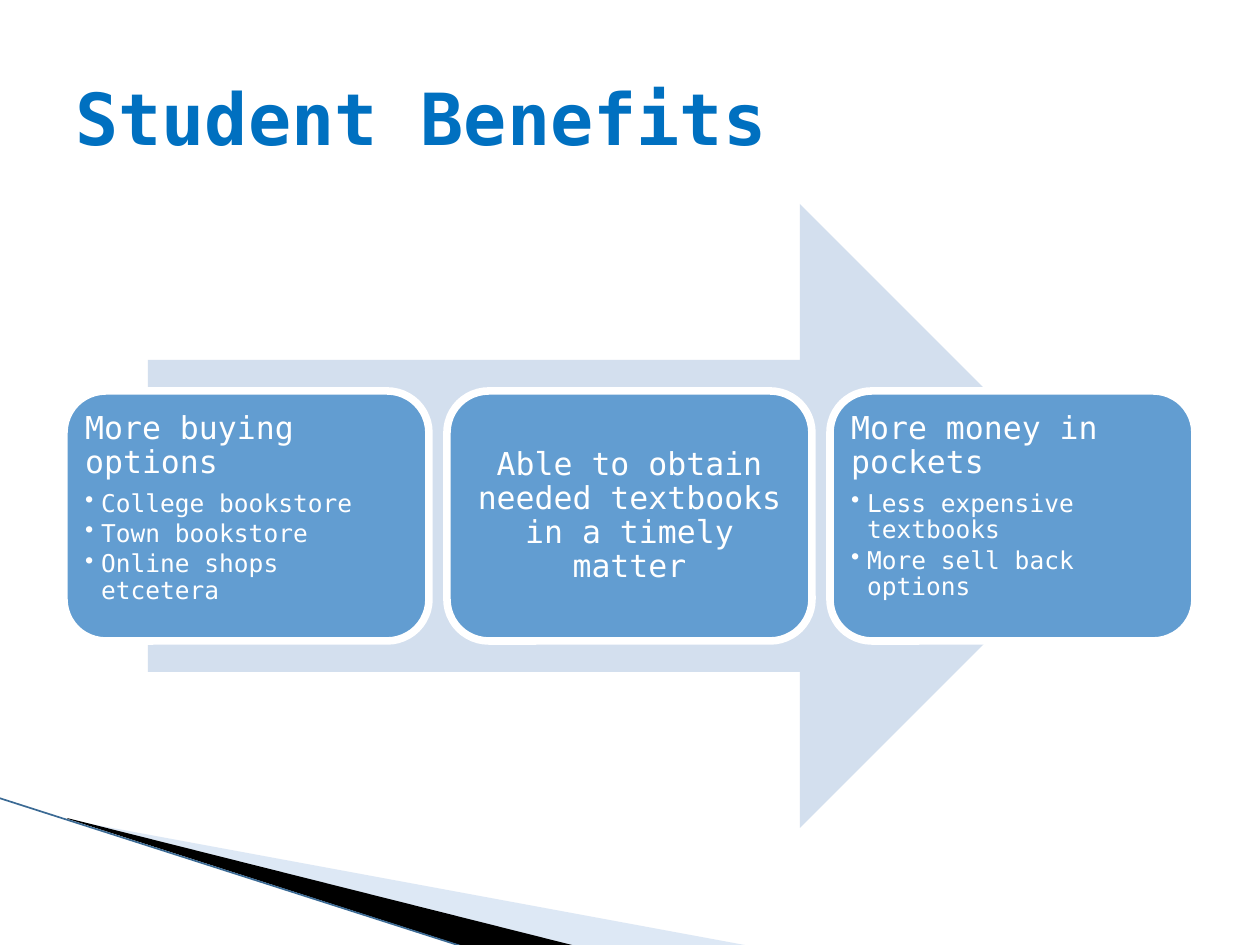
"""Build the Student Benefits slide: three benefit cards on a broad arrow."""
from lxml import etree
from pptx import Presentation
from pptx.dml.color import RGBColor
from pptx.enum.shapes import MSO_CONNECTOR, MSO_SHAPE
from pptx.enum.text import MSO_ANCHOR, PP_ALIGN
from pptx.oxml.ns import qn
from pptx.util import Pt

PX = 914400 / 126
ARROW, CARD = MSO_SHAPE.RIGHT_ARROW, MSO_SHAPE.ROUNDED_RECTANGLE
STRAIGHT = MSO_CONNECTOR.STRAIGHT
TOP, MIDDLE = MSO_ANCHOR.TOP, MSO_ANCHOR.MIDDLE
LEFT, CENTER = PP_ALIGN.LEFT, PP_ALIGN.CENTER


def rgb(value):
    return RGBColor.from_string(value)


def write(frame, text, size=18, color="FFFFFF", bold=False, align=LEFT,
          after=0, spacing=1.0, bullet=False):
    paragraph = frame.paragraphs[0]
    if paragraph.runs:
        paragraph = frame.add_paragraph()
    paragraph.alignment = align
    paragraph.line_spacing = spacing
    paragraph.space_after = Pt(after)
    if bullet:
        properties = paragraph._p.get_or_add_pPr()
        properties.set("marL", str(round(16 * PX)))
        properties.set("indent", str(round(-16 * PX)))
        etree.SubElement(properties, qn("a:buChar")).set("char", "•")
    run = paragraph.add_run()
    run.text = text
    run.font.name = "DejaVu Sans Mono"
    run.font.size = Pt(size)
    run.font.bold = bold
    run.font.color.rgb = rgb(color)


deck = Presentation()
deck.slide_width, deck.slide_height = round(1260 * PX), round(945 * PX)
slide = deck.slides.add_slide(deck.slide_layouts[6])
shapes = slide.shapes

wedges = [
    ([(69, 820), (750, 946), (575, 946), (69, 819)], "ABC6E6", 40),
    ([(67, 818), (576, 946), (469, 948), (68, 819)], "000000", 100),
]
for points, color, opacity in wedges:
    builder = shapes.build_freeform(*points[0], scale=PX)
    builder.add_line_segments(points[1:])
    wedge = builder.convert_to_shape()
    wedge.shadow.inherit = False
    wedge.fill.solid()
    wedge.fill.fore_color.rgb = rgb(color)
    wedge.line.fill.background()
    if opacity < 100:
        tint = wedge._element.spPr.find(qn("a:solidFill"))[0]
        etree.SubElement(tint, qn("a:alpha")).set("val", str(opacity * 1000))

edge = shapes.add_connector(STRAIGHT, *[round(n * PX) for n in (-1, 798, 467, 948)])
edge.line.color.rgb = rgb("3B6A94")
edge.line.width = Pt(0.95)
etree.SubElement(edge._element.spPr, qn("a:effectLst"))

title = shapes.add_textbox(*[round(n * PX) for n in (63, 38, 1134, 158)]).text_frame
title.word_wrap = True
title.vertical_anchor = MIDDLE
write(title, "Student Benefits", size=41, color="0070C0", bold=True)

arrow = shapes.add_shape(ARROW, *[round(n * PX) for n in (148, 204, 964, 624)])
arrow.shadow.inherit = False
arrow.fill.solid()
arrow.fill.fore_color.rgb = rgb("D3DFEE")
arrow.line.fill.background()

benefits = [
    ("More buying options",
     ["College bookstore", "Town bookstore", "Online shops etcetera"]),
    ("Able to obtain needed textbooks in a timely matter", []),
    ("More money in pockets",
     ["Less expensive textbooks", "More sell back options"]),
]
for index, (heading, details) in enumerate(benefits):
    box = (64 + index * 383, 391, 365, 250)
    card = shapes.add_shape(CARD, *[round(n * PX) for n in box])
    card.shadow.inherit = False
    card.fill.solid()
    card.fill.fore_color.rgb = rgb("629DD1")
    card.line.color.rgb = rgb("FFFFFF")
    card.line.width = Pt(4.33)
    frame = card.text_frame
    frame.word_wrap = True
    frame.margin_left = frame.margin_right = round(9 * PX)
    frame.margin_top = frame.margin_bottom = round(9 * PX)
    frame.vertical_anchor = TOP if details else MIDDLE
    write(frame, heading, align=LEFT if details else CENTER, after=6.3, spacing=0.9)
    for detail in details:
        write(frame, detail, size=14, after=2.1, spacing=0.9, bullet=True)

deck.save("out.pptx")
